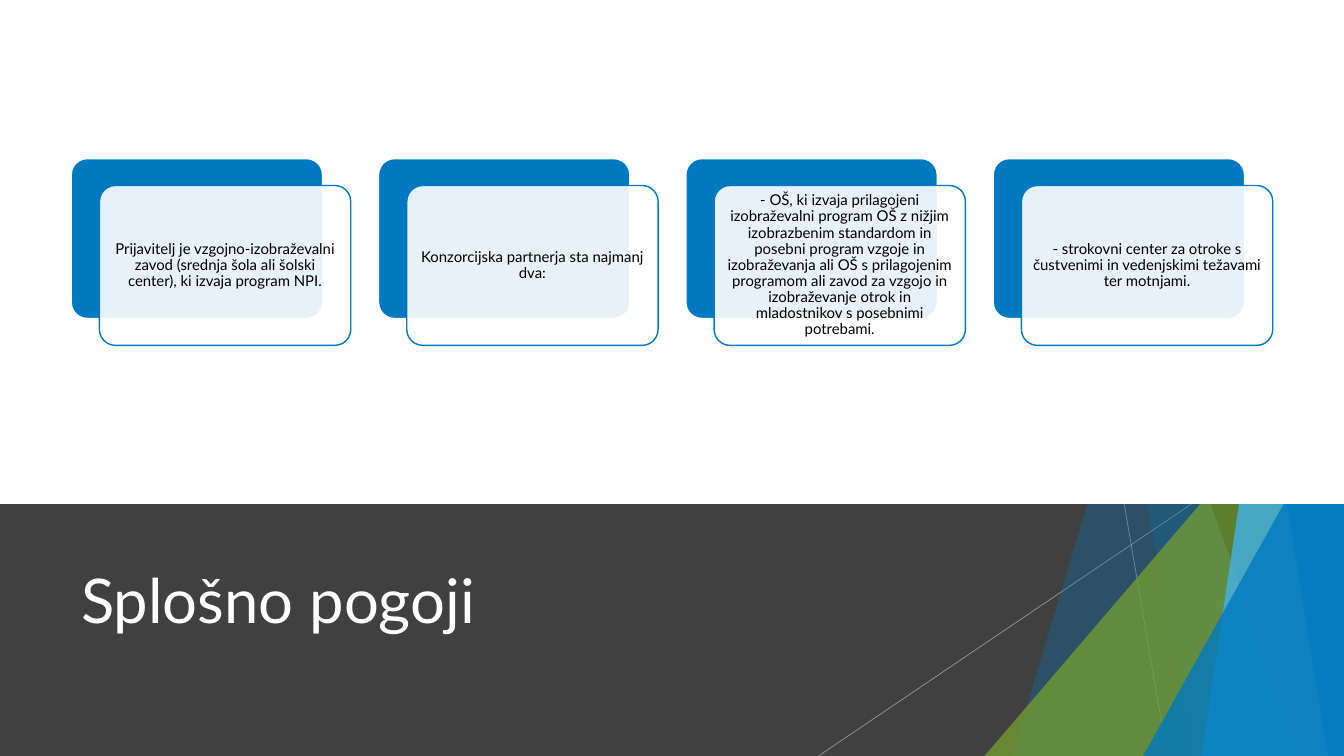
from dataclasses import dataclass

from lxml import etree
from pptx import Presentation
from pptx.dml.color import RGBColor
from pptx.enum.shapes import MSO_CONNECTOR, MSO_SHAPE
from pptx.enum.text import MSO_ANCHOR, PP_ALIGN
from pptx.oxml.ns import qn
from pptx.util import Inches, Pt


@dataclass(frozen=True)
class Theme:
    font: str = "Lato"
    title_size: int = 66
    card_size: int = 16
    white: str = "FFFFFF"
    black: str = "000000"
    dark: str = "404040"
    grey: str = "BFBFBF"
    blue: str = "0079C1"
    sky: str = "41B8FF"
    green: str = "78A22F"
    moss: str = "5A7A23"


@dataclass(frozen=True)
class Box:
    left: float
    top: float
    width: float
    height: float

    def inset(self, margin):
        return Box(self.left + margin, self.top + margin,
                   self.width - 2 * margin, self.height - 2 * margin)

    def lengths(self):
        return [Inches(value) for value in (self.left, self.top, self.width, self.height)]


THEME = Theme()
SLIDE = Box(0, 0, 20, 11.25)
CARDS = [
    "Prijavitelj je vzgojno-izobraževalni zavod (srednja šola ali šolski center), "
    "ki izvaja program NPI.",
    "Konzorcijska partnerja sta najmanj dva:",
    "- OŠ, ki izvaja prilagojeni izobraževalni program OŠ z nižjim izobrazbenim "
    "standardom in posebni program vzgoje in izobraževanja ali OŠ s prilagojenim "
    "programom ali zavod za vzgojo in izobraževanje otrok in mladostnikov s "
    "posebnimi potrebami.",
    "- strokovni center za otroke s čustvenimi in vedenjskimi težavami ter motnjami.",
]


def set_opacity(color_format, percent):
    color = color_format._xFill.find(qn("a:srgbClr"))
    etree.SubElement(color, qn("a:alpha"), val=str(percent * 1000))


def paint(shape, color, opacity=100, line=None):
    shape.shadow.inherit = False
    shape.fill.solid()
    shape.fill.fore_color.rgb = RGBColor.from_string(color)
    if opacity < 100:
        set_opacity(shape.fill.fore_color, opacity)
    if line:
        shape.line.color.rgb = RGBColor.from_string(line)
        shape.line.width = Pt(1.5)
    else:
        shape.line.fill.background()


def add_panel(shapes, box, color, kind=MSO_SHAPE.RECTANGLE, adjustment=None, **style):
    shape = shapes.add_shape(kind, *box.lengths())
    if adjustment is not None:
        shape.adjustments[0] = adjustment
    paint(shape, color, **style)


def add_text(shapes, box, text, size, color, margin=0.1, align=PP_ALIGN.LEFT, spacing=None):
    frame = shapes.add_textbox(*box.lengths()).text_frame
    frame.word_wrap = True
    frame.vertical_anchor = MSO_ANCHOR.MIDDLE
    frame.margin_left = frame.margin_right = Inches(margin)
    frame.margin_top = frame.margin_bottom = Inches(min(margin, 0.07))
    paragraph = frame.paragraphs[0]
    paragraph.text = text
    paragraph.alignment = align
    paragraph.line_spacing = spacing
    paragraph.font.name = THEME.font
    paragraph.font.size = Pt(size)
    paragraph.font.color.rgb = RGBColor.from_string(color)


def add_facets(slide, box):
    """Translucent shards and thin lines along the right edge of the box."""
    shapes = slide.shapes.add_group_shape().shapes
    right, bottom = box.left + box.width, box.top + box.height

    def add_thin_line(top_x, bottom_x):
        line = shapes.add_connector(
            MSO_CONNECTOR.STRAIGHT, Inches(box.left + top_x), Inches(box.top + 7.5),
            Inches(box.left + bottom_x), Inches(bottom))
        line.line.color.rgb = RGBColor.from_string(THEME.grey)
        line.line.width = Pt(0.75)
        set_opacity(line.line.color, 70)
        etree.SubElement(line._element.spPr, qn("a:effectLst"))

    def add_shard(top_x, bottom_x, color, opacity):
        corners = [(box.left + top_x, box.top), (right, box.top),
                   (right, bottom), (box.left + bottom_x, bottom)]
        points = [(Inches(x), Inches(y)) for x, y in corners]
        builder = shapes.build_freeform(*points[0])
        builder.add_line_segments(points[1:], close=True)
        paint(builder.convert_to_shape(), color, opacity)

    def add_corner(width, height, color, opacity):
        corner = Box(right - width, bottom - height, width, height)
        add_panel(shapes, corner, color, MSO_SHAPE.ISOSCELES_TRIANGLE, 1, opacity=opacity)

    add_thin_line(16.73, 17.37)
    add_thin_line(17.73, 12.18)
    add_shard(18.42, 15.06, THEME.blue, 30)
    add_shard(15.75, 17.74, THEME.blue, 20)
    add_corner(5.35, 6.25, THEME.green, 72)
    add_shard(15.31, 19.37, THEME.moss, 70)
    add_shard(19.55, 17.88, THEME.sky, 70)
    add_shard(17.94, 19.76, THEME.blue, 65)
    add_corner(2.99, 5.36, THEME.blue, 80)


def add_title_band(slide, box):
    add_panel(slide.shapes, box, THEME.dark)
    add_facets(slide, SLIDE)
    title = Box(box.left + 1.11, box.top + 0.32, 14.1, 2.17)
    add_text(slide.shapes, title, "Splošno pogoji", THEME.title_size, THEME.white)


def add_card(shapes, box, text):
    """A blue back plate with a translucent front plate shifted down and right."""
    shift_x, shift_y = 0.42, 0.4
    width, height = box.width - shift_x, box.height - shift_y
    back = Box(box.left, box.top, width, height)
    front = Box(box.left + shift_x, box.top + shift_y, width, height)
    rounded = MSO_SHAPE.ROUNDED_RECTANGLE
    add_panel(shapes, back, THEME.blue, rounded, 0.1, line=THEME.white)
    add_panel(shapes, front, THEME.white, rounded, 0.1, opacity=90, line=THEME.blue)
    add_text(shapes, front.inset(0.07), text, THEME.card_size, THEME.black,
             margin=0.07, align=PP_ALIGN.CENTER, spacing=0.9)


def add_card_row(slide, box):
    add_panel(slide.shapes, box, THEME.white)
    shapes = slide.shapes.add_group_shape().shapes
    margin, card_width = 1.06, 4.16
    pitch = (box.width - 2 * margin - card_width) / (len(CARDS) - 1)
    for index, text in enumerate(CARDS):
        left = box.left + margin + index * pitch
        add_card(shapes, Box(left, box.top + 2.36, card_width, 2.78), text)


def main():
    presentation = Presentation()
    presentation.slide_width = Inches(SLIDE.width)
    presentation.slide_height = Inches(SLIDE.height)
    slide = presentation.slides.add_slide(presentation.slide_layouts[6])
    # The card area comes last because it covers the upper part of the facets
    add_title_band(slide, Box(0, 7.5, 20, 3.75))
    add_card_row(slide, Box(0, 0, 20, 7.5))
    presentation.save("out.pptx")


if __name__ == "__main__":
    main()
